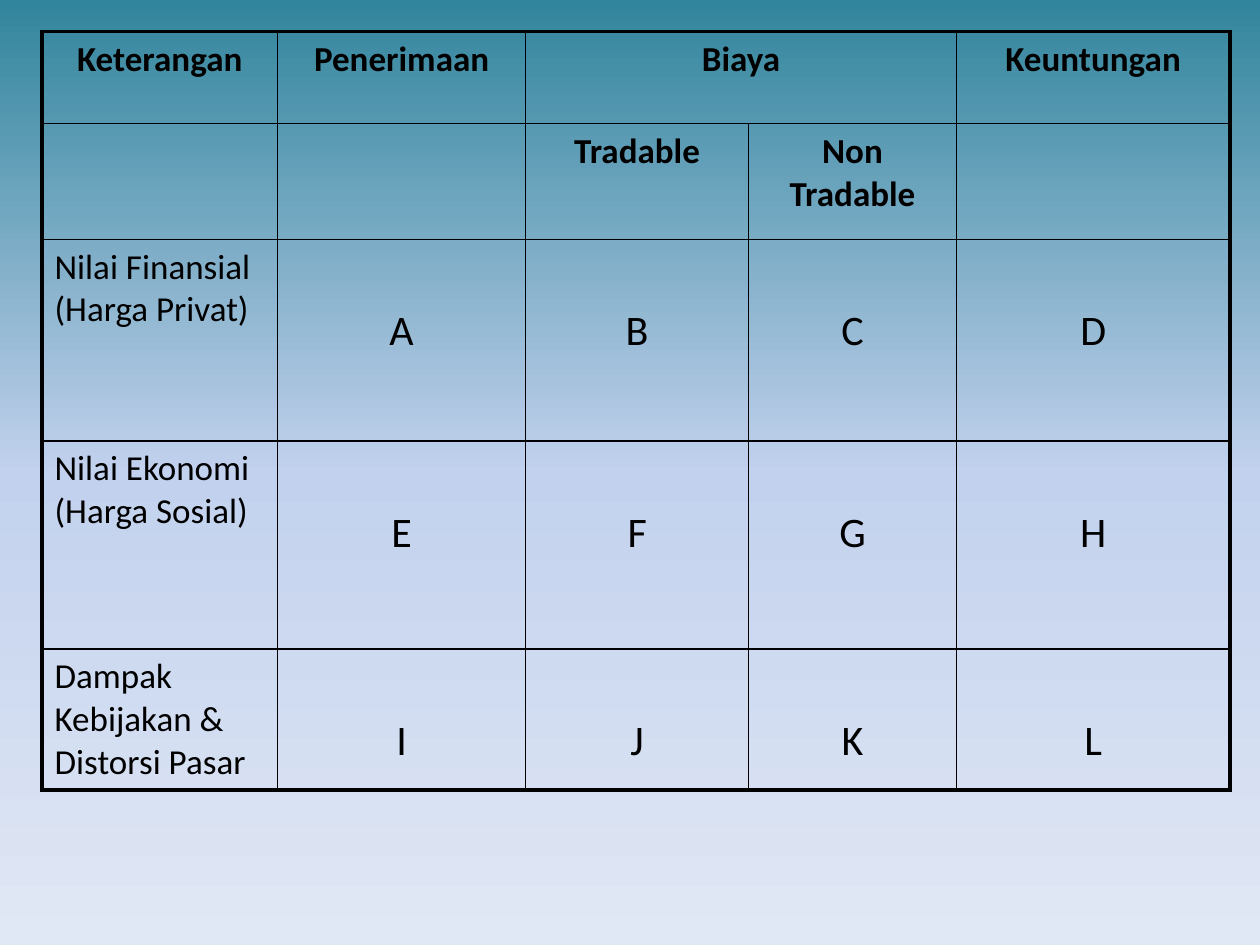
import pptx
import pptx.util
import pptx.dml.color
import pptx.enum.text
import pptx.oxml.ns
import lxml.etree

Pt = pptx.util.Pt
qn = pptx.oxml.ns.qn
Align = pptx.enum.text.PP_ALIGN

ROWS = [
    ["Keterangan", "Penerimaan", "Biaya", "", "Keuntungan"],
    ["", "", "Tradable", "Non Tradable", ""],
    ["Nilai Finansial (Harga Privat)", "A", "B", "C", "D"],
    ["Nilai Ekonomi (Harga Sosial)", "E", "F", "G", "H"],
    ["Dampak Kebijakan & Distorsi Pasar", "I", "J", "K", "L"],
]
HEADER_ROWS = 2
COLUMN_WIDTHS = [134.6, 141.8, 127.4, 118.8, 156.2]
ROW_HEIGHTS = [52.6, 66.2, 115.2, 118.8, 80.6]
TABLE_LEFT, TABLE_TOP = 24, 18
LETTER_TOP = 38

THEME = {
    "font": "Calibri",
    "ink": "000000",
    "label_size": 20,
    "letter_size": 24,
    "outer_line": 2.25,
    "inner_line": 1,
    "background": [(0, "31859C"), (50, "C2D1ED"), (100, "E1E8F5")],
}


def add_color(parent, color):
    lxml.etree.SubElement(parent, qn("a:srgbClr"), val=color)


def paint_background(page):
    fill = page.background.fill
    fill.gradient()
    fill.gradient_angle = 270
    stops = next(page.element.iter(qn("a:gsLst")))
    for stop in list(stops):
        stops.remove(stop)
    for percent, color in THEME["background"]:
        stop = lxml.etree.SubElement(stops, qn("a:gs"), pos=str(percent * 1000))
        add_color(stop, color)


def draw_borders(cell, row, column):
    properties = cell._tc.get_or_add_tcPr()
    on_edge = {
        "a:lnL": column == 0,
        "a:lnR": column == len(COLUMN_WIDTHS) - 1,
        "a:lnT": row == 0,
        "a:lnB": row == len(ROWS) - 1,
    }
    for side, outer in on_edge.items():
        width = Pt(THEME["outer_line" if outer else "inner_line"])
        line = lxml.etree.SubElement(properties, qn(side), w=str(int(width)))
        add_color(lxml.etree.SubElement(line, qn("a:solidFill")), THEME["ink"])


def write_cell(cell, text, row, column):
    is_header = row < HEADER_ROWS
    is_letter = not is_header and column > 0
    para = cell.text_frame.paragraphs[0]
    para.text = text
    para.alignment = Align.CENTER if is_header or is_letter else Align.LEFT
    para.font.name = THEME["font"]
    para.font.size = Pt(THEME["letter_size" if is_letter else "label_size"])
    para.font.bold = is_header
    para.font.color.rgb = pptx.dml.color.RGBColor.from_string(THEME["ink"])
    if is_letter:
        cell.margin_top = Pt(LETTER_TOP)


def add_policy_table(page):
    frame = page.shapes.add_table(
        len(ROWS), len(COLUMN_WIDTHS), Pt(TABLE_LEFT), Pt(TABLE_TOP),
        Pt(sum(COLUMN_WIDTHS)), Pt(sum(ROW_HEIGHTS)))
    table = frame.table
    table.first_row = table.horz_banding = False
    for column, width in zip(table.columns, COLUMN_WIDTHS):
        column.width = Pt(width)
    for row, height in zip(table.rows, ROW_HEIGHTS):
        row.height = Pt(height)
    table.cell(0, 2).merge(table.cell(0, 3))
    for row, texts in enumerate(ROWS):
        for column, text in enumerate(texts):
            cell = table.cell(row, column)
            write_cell(cell, text, row, column)
            draw_borders(cell, row, column)
            cell.fill.background()


def main():
    deck = pptx.Presentation()
    deck.slide_width, deck.slide_height = Pt(720), Pt(540)
    page = deck.slides.add_slide(deck.slide_layouts[6])
    paint_background(page)
    add_policy_table(page)
    deck.save("out.pptx")


if __name__ == "__main__":
    main()
